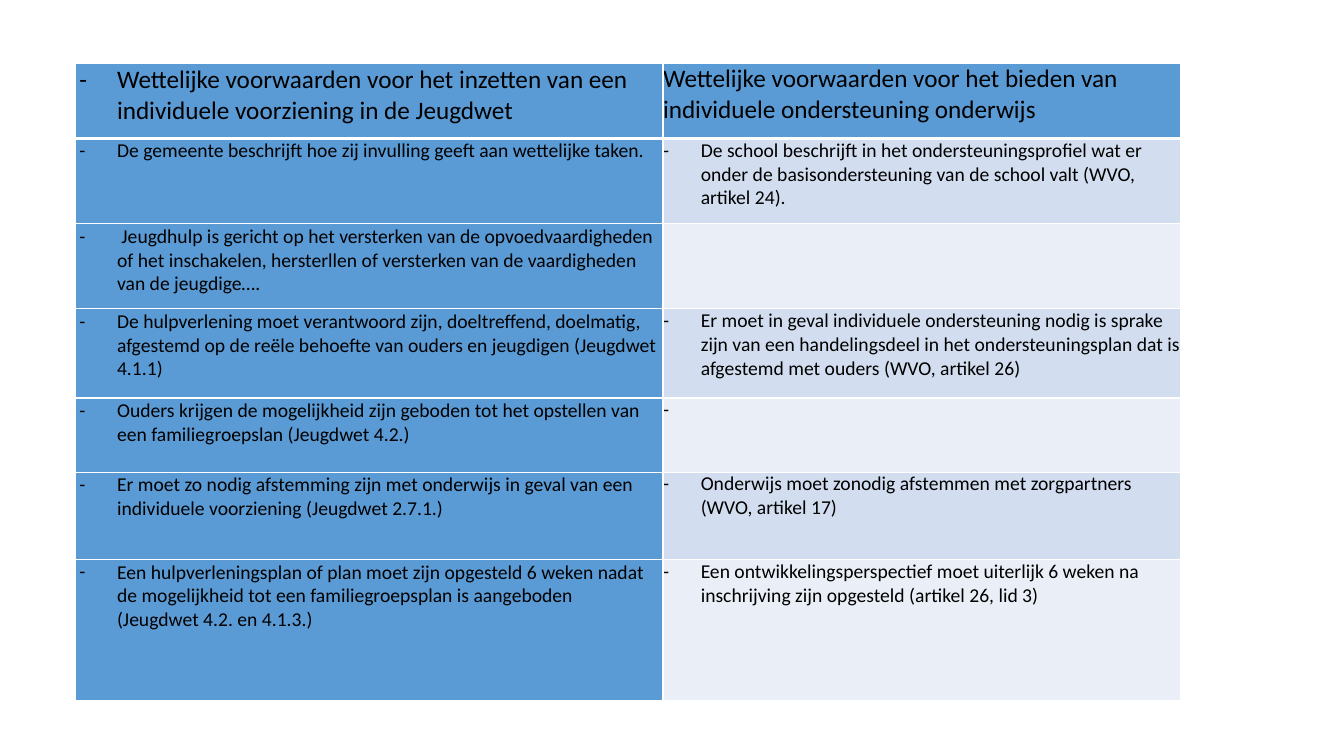
"""Build a slide comparing the legal conditions for youth care and education support."""
from dataclasses import dataclass

import pptx
import pptx.dml.color
import pptx.oxml
import pptx.oxml.ns
import pptx.util
from pptx.util import Cm, Pt

HEADINGS = (
    "Wettelijke voorwaarden voor het inzetten van een individuele voorziening in de Jeugdwet",
    "Wettelijke voorwaarden voor het bieden van individuele ondersteuning onderwijs",
)
CONDITIONS = [
    ("De gemeente beschrijft hoe zij invulling geeft aan wettelijke taken.",
     "De school beschrijft in het ondersteuningsprofiel wat er onder de basisondersteuning "
     "van de school valt (WVO, artikel 24)."),
    (" Jeugdhulp is gericht op het versterken van de opvoedvaardigheden of het inschakelen, "
     "hersterllen of versterken van de vaardigheden van de jeugdige….",
     ""),
    ("De hulpverlening moet verantwoord zijn, doeltreffend, doelmatig, afgestemd op de reële "
     "behoefte van ouders en jeugdigen (Jeugdwet 4.1.1)",
     "Er moet in geval individuele ondersteuning nodig is sprake zijn van een handelingsdeel "
     "in het ondersteuningsplan dat is afgestemd met ouders (WVO, artikel 26)"),
    ("Ouders krijgen de mogelijkheid zijn geboden tot het opstellen van een familiegroepslan "
     "(Jeugdwet 4.2.)",
     " "),
    ("Er moet zo nodig afstemming zijn met onderwijs in geval van een individuele voorziening "
     "(Jeugdwet 2.7.1.)",
     "Onderwijs moet zonodig afstemmen met zorgpartners (WVO, artikel 17)"),
    ("Een hulpverleningsplan of plan moet zijn opgesteld 6 weken nadat de mogelijkheid tot een "
     "familiegroepsplan is aangeboden (Jeugdwet 4.2. en 4.1.3.)",
     "Een ontwikkelingsperspectief moet uiterlijk 6 weken na inschrijving zijn opgesteld "
     "(artikel 26, lid 3)"),
]
COLUMN_WIDTHS = (14.81, 13.04)
ROW_HEIGHTS = (1.88, 2.15, 2.14, 2.25, 1.87, 2.2, 3.55)
CELL_MARGINS = ((0.1, 0.02, 0.1, 0), (0, 0, 0, 0))


@dataclass(frozen=True)
class Theme:
    """Colours, font and type sizes."""
    font: str = "Calibri"
    heading_size: int = 18
    body_size: int = 14
    text: str = "000000"
    border: str = "FFFFFF"
    accent: str = "5B9BD5"
    bands: tuple = ("D2DEEF", "EAEFF7")


THEME = Theme()


def rgb(value):
    """Turn a hex string into a colour."""
    return pptx.dml.color.RGBColor.from_string(value)


def add_borders(cell, bottom_width):
    """Draw the four borders of a cell."""
    properties = cell._tc.get_or_add_tcPr()
    for side, width in (("L", 1), ("R", 1), ("T", 1), ("B", bottom_width)):
        properties.append(pptx.oxml.parse_xml(
            f'<a:ln{side} {pptx.oxml.ns.nsdecls("a")} w="{Pt(width)}"><a:solidFill>'
            f'<a:srgbClr val="{THEME.border}"/></a:solidFill></a:ln{side}>'))


def add_dash(para):
    """Give a paragraph a dash with a hanging indent."""
    properties = para._p.get_or_add_pPr()
    properties.set("marL", str(Cm(0.95)))
    properties.set("indent", str(-Cm(0.95)))
    for element in (f'buFont {pptx.oxml.ns.nsdecls("a")} typeface="{THEME.font}"',
                    f'buChar {pptx.oxml.ns.nsdecls("a")} char="-"'):
        properties.append(pptx.oxml.parse_xml(f"<a:{element}/>"))


def fill_cell(cell, row, column, text):
    """Write and format one cell."""
    is_heading = row == 0
    add_borders(cell, 3 if is_heading else 1)
    cell.fill.solid()
    in_accent = is_heading or column == 0
    cell.fill.fore_color.rgb = rgb(THEME.accent if in_accent else THEME.bands[(row - 1) % 2])
    (cell.margin_left, cell.margin_top,
     cell.margin_right, cell.margin_bottom) = map(Cm, CELL_MARGINS[column])
    para = cell.text_frame.paragraphs[0]
    if text:
        para.add_run().text = text
        if (row, column) != (0, 1):
            add_dash(para)
    para.font.name = THEME.font
    para.font.size = Pt(THEME.heading_size if is_heading else THEME.body_size)
    para.font.bold = False
    para.font.color.rgb = rgb(THEME.text)


def main():
    """Create and save the deck."""
    deck = pptx.Presentation()
    deck.slide_width, deck.slide_height = Cm(33.87), Cm(19.05)
    page = deck.slides.add_slide(deck.slide_layouts[6])
    rows = [HEADINGS, *CONDITIONS]
    table = page.shapes.add_table(
        len(rows), len(HEADINGS), Cm(1.9), Cm(1.61),
        Cm(sum(COLUMN_WIDTHS)), Cm(sum(ROW_HEIGHTS))).table
    table.first_row = table.horz_banding = False
    for column, width in zip(table.columns, COLUMN_WIDTHS):
        column.width = Cm(width)
    for row, (texts, height) in enumerate(zip(rows, ROW_HEIGHTS)):
        table.rows[row].height = Cm(height)
        for column, text in enumerate(texts):
            fill_cell(table.cell(row, column), row, column, text)
    deck.save("out.pptx")


if __name__ == "__main__":
    main()
